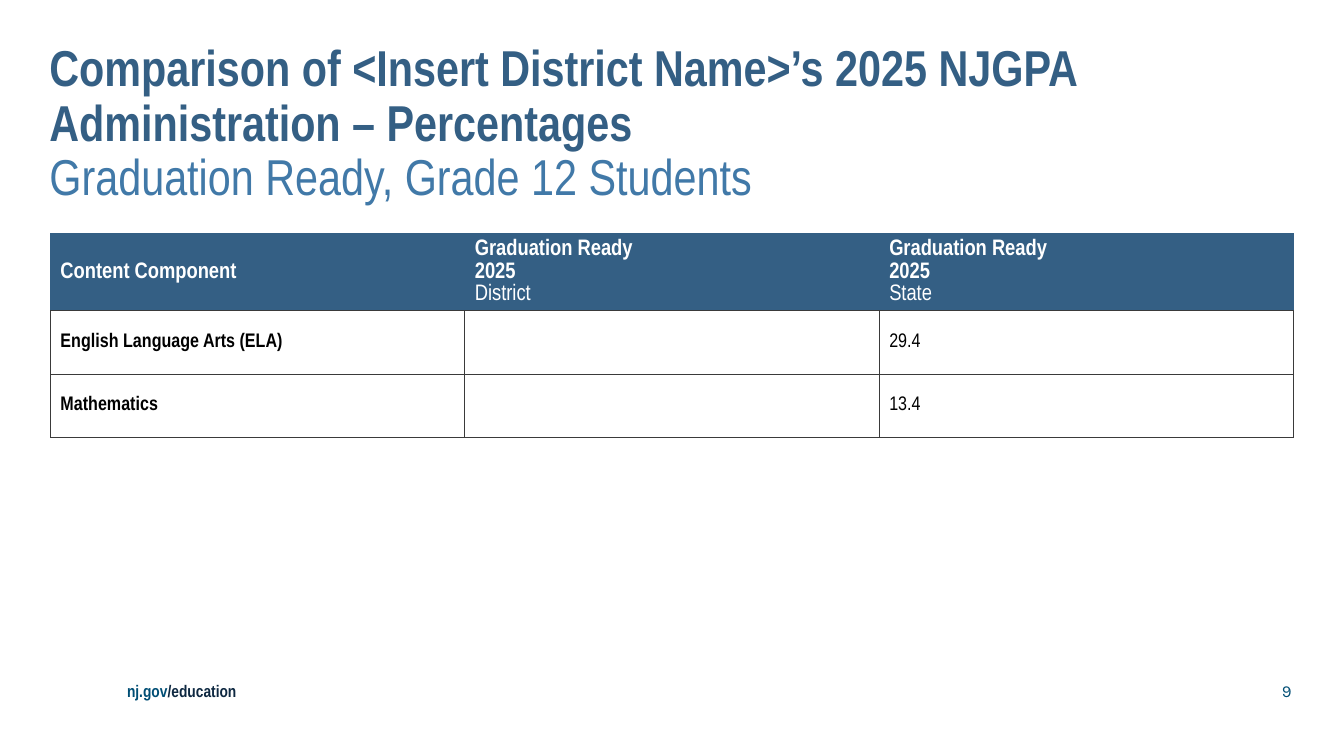
from dataclasses import dataclass

import lxml.etree
import pptx
import pptx.dml.color
import pptx.enum.text
import pptx.oxml.ns
import pptx.util

Inches = pptx.util.Inches
Pt = pptx.util.Pt
ALIGN = pptx.enum.text.PP_ALIGN
ANCHOR = pptx.enum.text.MSO_ANCHOR

COLORS = {
    "navy": "345F84",
    "blue": "4179A8",
    "teal": "004E75",
    "ink": "0E2841",
    "grid": "3A3A3A",
    "black": "000000",
    "white": "FFFFFF",
}
FONT = "Arial Narrow"


@dataclass
class Run:
    text: str
    color: str
    bold: bool = False


@dataclass
class Footer:
    left: float
    runs: list[Run]
    font: str
    align: ALIGN


@dataclass
class Line:
    text: str
    bold: bool = False


FOOTERS = [
    Footer(1.26, [Run("nj.gov", "teal", True), Run("/education", "ink", True)], FONT, ALIGN.LEFT),
    Footer(7.19, [Run("9", "teal")], "Karla", ALIGN.RIGHT),
]
HEADER = [
    [Line("Content Component", True)],
    [Line("Graduation Ready\n2025", True), Line("District")],
    [Line("Graduation Ready\n2025", True), Line("State")],
]
BODY = [
    [[Line("English Language Arts (ELA)", True)], [Line("")], [Line("29.4")]],
    [[Line("Mathematics", True)], [Line("")], [Line("13.4")]],
]


def rgb(name: str) -> pptx.dml.color.RGBColor:
    return pptx.dml.color.RGBColor.from_string(COLORS[name])


def clear_insets(tf) -> None:
    tf.margin_left = tf.margin_right = tf.margin_top = tf.margin_bottom = 0
    tf.word_wrap = True


def add_run(p, run: Run) -> None:
    r = p.add_run()
    r.text = run.text
    r.font.bold = run.bold
    r.font.color.rgb = rgb(run.color)


def add_title(slide) -> None:
    sp = slide.shapes.title
    sp.left, sp.top, sp.width, sp.height = map(Inches, (0.49, 0.43, 12.33, 0.46))
    tf = sp.text_frame
    clear_insets(tf)
    tf.auto_size = pptx.enum.text.MSO_AUTO_SIZE.NONE
    tf.vertical_anchor = ANCHOR.TOP
    p = tf.paragraphs[0]
    p.alignment = ALIGN.LEFT
    p.line_spacing = 0.9
    p.font.name, p.font.size = FONT, Pt(36)
    add_run(p, Run("Comparison of <Insert District Name>’s 2025 NJGPA Administration – Percentages", "navy", True))
    p.add_line_break()
    add_run(p, Run("Graduation Ready, Grade 12 Students", "blue"))


def add_footer(slide, footer: Footer) -> None:
    sp = slide.shapes.add_textbox(Inches(footer.left), Inches(6.75), Inches(5.62), Inches(0.2))
    tf = sp.text_frame
    clear_insets(tf)
    tf.vertical_anchor = ANCHOR.MIDDLE
    p = tf.paragraphs[0]
    p.alignment = footer.align
    p.font.name, p.font.size = footer.font, Pt(12)
    for run in footer.runs:
        add_run(p, run)


def set_borders(cell, drawn_sides: str) -> None:
    """Draw the given sides (from L, R, T, B) and blank the others."""
    tc_pr = cell._tc.get_or_add_tcPr()
    qn = pptx.oxml.ns.qn
    for side in "LRTB":
        ln = lxml.etree.SubElement(tc_pr, qn(f"a:ln{side}"), w=str(Pt(0.5)))
        if side in drawn_sides:
            fill = lxml.etree.SubElement(ln, qn("a:solidFill"))
            lxml.etree.SubElement(fill, qn("a:srgbClr"), val=COLORS["grid"])
        else:
            lxml.etree.SubElement(ln, qn("a:noFill"))


def fill_cell(cell, lines: list[Line], is_header: bool) -> None:
    set_borders(cell, "B" if is_header else "LRTB")
    cell.fill.solid()
    cell.fill.fore_color.rgb = rgb("navy" if is_header else "white")
    cell.vertical_anchor = ANCHOR.MIDDLE
    tf = cell.text_frame
    for i, line in enumerate(lines):
        p = tf.add_paragraph() if i else tf.paragraphs[0]
        p.text = line.text
        if is_header:
            p.line_spacing = Pt(16)
        p.font.name = FONT
        p.font.size = Pt(16 if is_header else 14)
        p.font.bold = line.bold
        p.font.color.rgb = rgb("white" if is_header else "black")


def add_results_table(slide) -> None:
    rows = [HEADER, *BODY]
    heights = [0.77, 0.63, 0.63]
    frame = slide.shapes.add_table(
        len(rows), len(HEADER), Inches(0.5), Inches(2.31), Inches(12.33), Inches(sum(heights))
    )
    table = frame.table
    table.horz_banding = False
    for column in table.columns:
        column.width = Inches(4.11)
    for i, (row, height) in enumerate(zip(rows, heights)):
        table.rows[i].height = Inches(height)
        for j, lines in enumerate(row):
            fill_cell(table.cell(i, j), lines, i == 0)


def main() -> None:
    prs = pptx.Presentation()
    prs.slide_width, prs.slide_height = Inches(13.33), Inches(7.5)
    slide = prs.slides.add_slide(prs.slide_layouts[5])

    # Footer address and page number
    for footer in FOOTERS:
        add_footer(slide, footer)

    # Title and subtitle
    add_title(slide)

    # Percentages by content component
    add_results_table(slide)

    prs.save("out.pptx")


if __name__ == "__main__":
    main()
